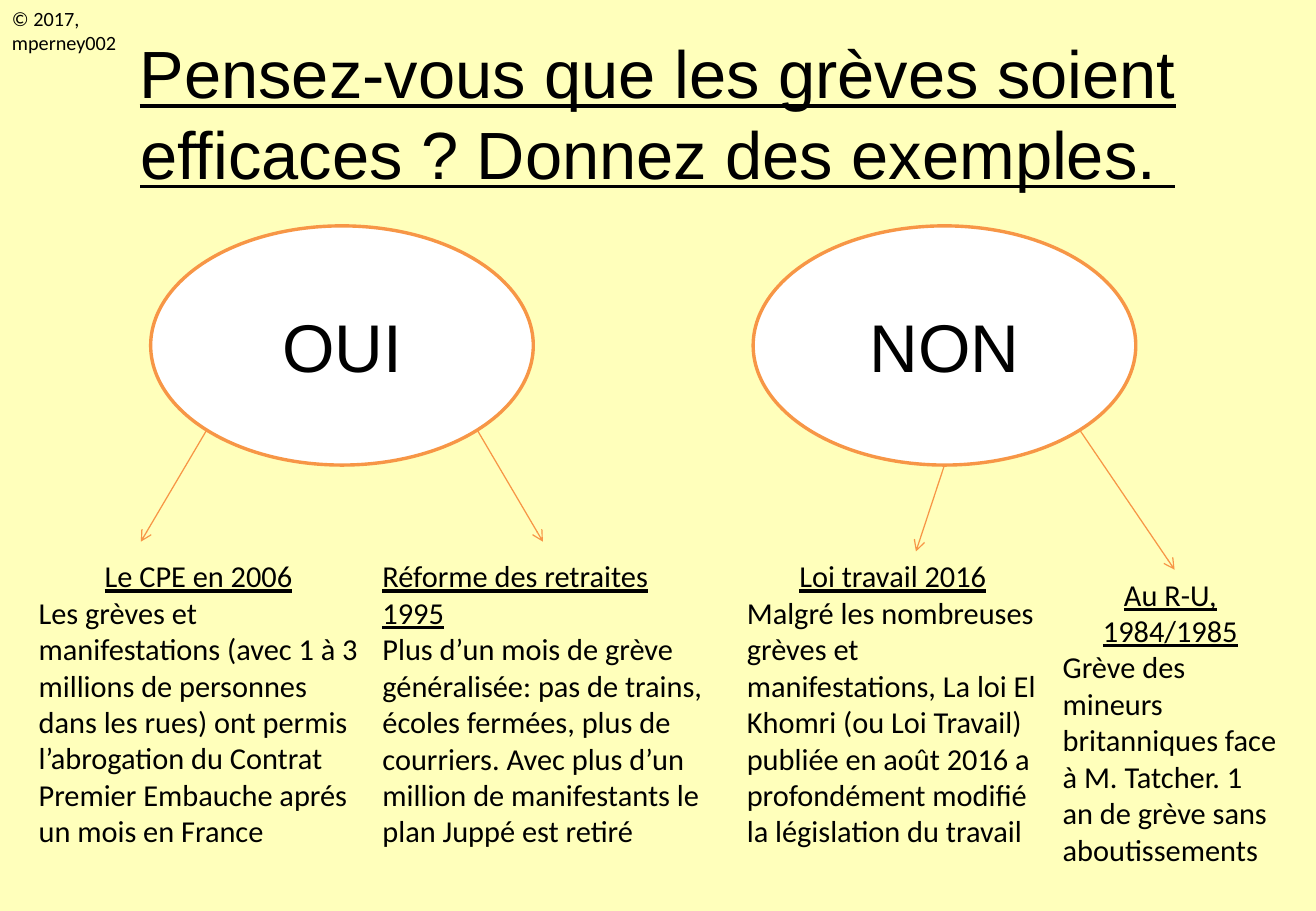
from dataclasses import dataclass
from math import cos, radians, sin

from lxml.etree import SubElement
from pptx import Presentation
from pptx.dml.color import RGBColor
from pptx.enum.shapes import MSO_CONNECTOR, MSO_SHAPE
from pptx.enum.text import MSO_ANCHOR, MSO_AUTO_SIZE, PP_ALIGN
from pptx.oxml.ns import qn
from pptx.util import Pt


@dataclass(frozen=True)
class Theme:
    back: str = "FFFFBB"
    fill: str = "FFFFFF"
    line: str = "F79646"
    ink: str = "000000"
    head: str = "Arial"
    body: str = "Calibri"
    title: float = 39.6
    oval: float = 40
    text: float = 18
    note: float = 12
    edge: float = 2
    thin: float = 0.75


THEME = Theme()
LEFT, MID = PP_ALIGN.LEFT, PP_ALIGN.CENTER
SIZE = (780, 540)
TITLE = "Pensez-vous que les grèves soient efficaces ? Donnez des exemples. "
TITLE_BOX = (38.9, 21.6, 702, 90)
CREDIT = ("© 2017,", "mperney002")
CREDIT_BOX = (0, 0, 116.6, 21.6)
OVAL_TOP, OVAL_W, OVAL_H = 133.9, 226.8, 141.8
OVALS = [
    ("OUI", 89.3, [(135, 83.5, 321.1), (45, 321.8, 321.1)]),
    ("NON", 446.4, [(90, 542.9, 326.9), (45, 696.2, 337.7)]),
]
CASES = [
    ("Le CPE en 2006", MID, (15.84, 326.9, 203.76, 203.8),
     "Les grèves et manifestations (avec 1 à 3 millions de personnes dans les rues) "
     "ont permis l’abrogation du Contrat Premier Embauche aprés un mois en France"),
    ("Réforme des retraites 1995", LEFT, (219.6, 326.9, 209.52, 159.8),
     "Plus d’un mois de grève généralisée: pas de trains, écoles fermées, plus de "
     "courriers. Avec plus d’un million de manifestants le plan Juppé est retiré"),
    ("Loi travail 2016", MID, (435.6, 326.9, 187.2, 181.4),
     "Malgré les nombreuses grèves et manifestations, La loi El Khomri (ou Loi "
     "Travail) publiée en août 2016 a profondément modifié la législation du travail"),
    ("Au R-U, 1984/1985", MID, (622.8, 337.7, 141.84, 181.4),
     "Grève des mineurs britanniques face à M. Tatcher. 1 an de grève sans aboutissements"),
]


def color(code):
    return RGBColor.from_string(code)


def points(*nums):
    return [Pt(num) for num in nums]


def write(para, text, font, size, under=False, align=LEFT):
    para.alignment = align
    run = para.add_run()
    run.text = text
    run.font.name = font
    run.font.size = Pt(size)
    run.font.underline = under
    run.font.color.rgb = color(THEME.ink)


def add_box(slide, area):
    frame = slide.shapes.add_textbox(*points(*area)).text_frame
    frame.word_wrap = True
    frame.auto_size = MSO_AUTO_SIZE.SHAPE_TO_FIT_TEXT
    return frame


def add_title(slide):
    title = slide.shapes.title
    title.left, title.top, title.width, title.height = points(*TITLE_BOX)
    frame = title.text_frame
    frame.auto_size = MSO_AUTO_SIZE.NONE
    frame.vertical_anchor = MSO_ANCHOR.MIDDLE
    write(frame.paragraphs[0], TITLE, THEME.head, THEME.title, True, MID)


def add_oval(slide, label, left):
    oval = slide.shapes.add_shape(
        MSO_SHAPE.OVAL, *points(left, OVAL_TOP, OVAL_W, OVAL_H))
    oval.shadow.inherit = False
    oval.fill.solid()
    oval.fill.fore_color.rgb = color(THEME.fill)
    oval.line.color.rgb = color(THEME.line)
    oval.line.width = Pt(THEME.edge)
    frame = oval.text_frame
    frame.vertical_anchor = MSO_ANCHOR.MIDDLE
    write(frame.paragraphs[0], label, THEME.head, THEME.oval, align=MID)


def add_arrow(slide, left, angle, x, y):
    turn = radians(angle)
    from_x = left + OVAL_W / 2 * (1 + cos(turn))
    from_y = OVAL_TOP + OVAL_H / 2 * (1 + sin(turn))
    arrow = slide.shapes.add_connector(
        MSO_CONNECTOR.STRAIGHT, *points(from_x, from_y, x, y))
    arrow.line.color.rgb = color(THEME.line)
    arrow.line.width = Pt(THEME.thin)
    SubElement(arrow.line._get_or_add_ln(), qn("a:tailEnd")).set("type", "arrow")
    SubElement(arrow._element.spPr, qn("a:effectLst"))


def add_case(slide, head, align, area, text):
    frame = add_box(slide, area)
    write(frame.paragraphs[0], head, THEME.body, THEME.text, True, align)
    write(frame.add_paragraph(), text, THEME.body, THEME.text)


def add_credit(slide):
    para = add_box(slide, CREDIT_BOX).paragraphs[0]
    first, last = CREDIT
    write(para, first, THEME.body, THEME.note)
    para.add_line_break()
    write(para, last, THEME.body, THEME.note)


def main():
    deck = Presentation()
    deck.slide_width, deck.slide_height = points(*SIZE)
    slide = deck.slides.add_slide(deck.slide_layouts.get_by_name("Title Only"))
    slide.background.fill.solid()
    slide.background.fill.fore_color.rgb = color(THEME.back)
    add_title(slide)
    for label, left, tips in OVALS:
        add_oval(slide, label, left)
        for tip in tips:
            add_arrow(slide, left, *tip)
    for case in CASES:
        add_case(slide, *case)
    add_credit(slide)
    deck.save("out.pptx")


if __name__ == "__main__":
    main()
